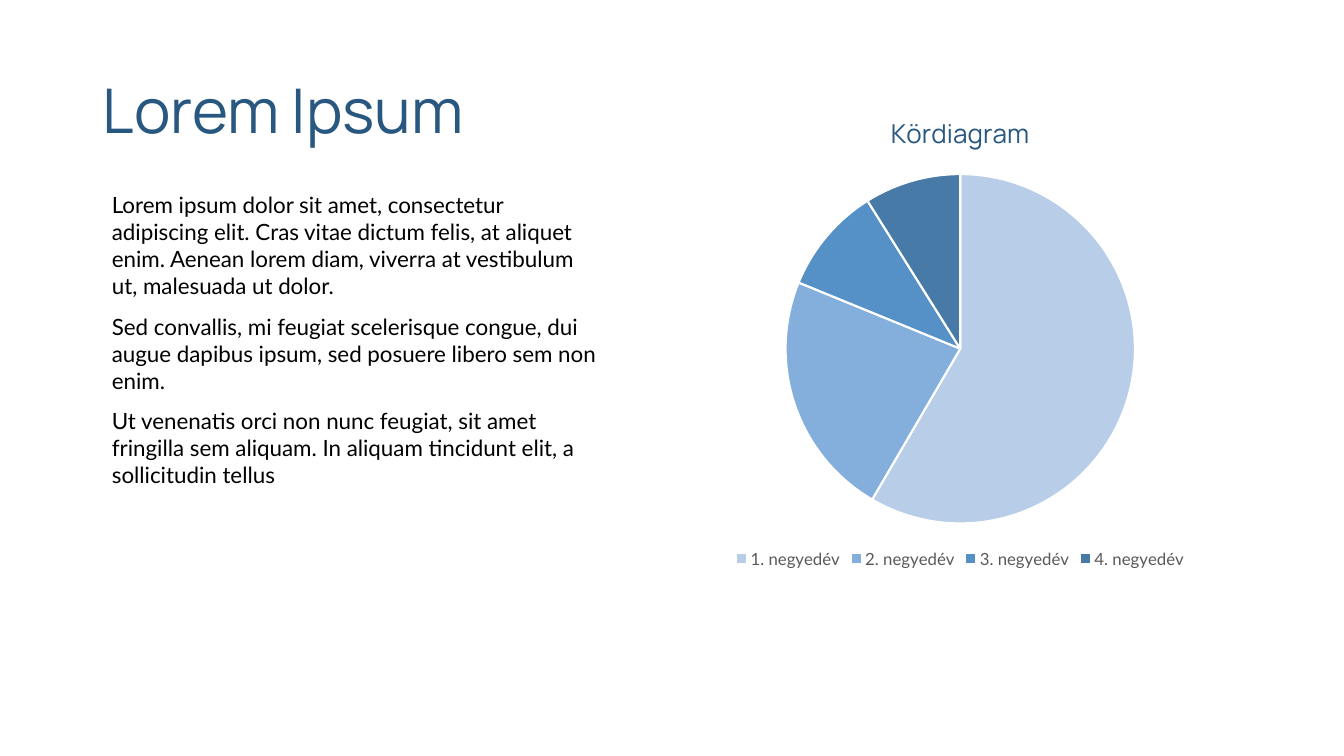
from dataclasses import dataclass

from pptx import Presentation
from pptx.chart.data import CategoryChartData
from pptx.dml.color import RGBColor
from pptx.enum.chart import XL_CHART_TYPE, XL_LEGEND_POSITION
from pptx.enum.text import MSO_ANCHOR
from pptx.util import Cm, Pt

PIE = XL_CHART_TYPE.PIE
BOTTOM = XL_LEGEND_POSITION.BOTTOM
TOP_ANCHOR = MSO_ANCHOR.TOP
MIDDLE_ANCHOR = MSO_ANCHOR.MIDDLE

HEADING_FONT, BODY_FONT = "Manrope", "Lato"
NAVY, BLACK, GRAY, WHITE = "285780", "000000", "595959", "FFFFFF"

PARAGRAPHS = [
    "Lorem ipsum dolor sit amet, consectetur adipiscing elit. Cras vitae dictum felis, "
    "at aliquet enim. Aenean lorem diam, viverra at vestibulum ut, malesuada ut dolor.",
    "Sed convallis, mi feugiat scelerisque congue, dui augue dapibus ipsum, "
    "sed posuere libero sem non enim.",
    "Ut venenatis orci non nunc feugiat, sit amet fringilla sem aliquam. "
    "In aliquam tincidunt elit, a sollicitudin tellus",
]


@dataclass(frozen=True)
class Box:
    left: float
    top: float
    width: float
    height: float

    def lengths(self):
        return Cm(self.left), Cm(self.top), Cm(self.width), Cm(self.height)


@dataclass(frozen=True)
class Quarter:
    name: str
    value: int
    color: str


QUARTERS = [
    Quarter("1. negyedév", 59, "B8CDE8"),
    Quarter("2. negyedév", 23, "84AEDC"),
    Quarter("3. negyedév", 10, "5591C7"),
    Quarter("4. negyedév", 9, "487AA8"),
]


def rgb(color: str) -> RGBColor:
    return RGBColor.from_string(color)


def style_font(font, name: str, size: float, color: str) -> None:
    font.name = name
    font.size = Pt(size)
    font.bold = False
    font.color.rgb = rgb(color)


def add_text(slide, box: Box, paragraphs: list[str], *, font: str, size: float, color: str,
             anchor=TOP_ANCHOR, line_spacing: float = 1.0, space_before: float = 0) -> None:
    tf = slide.shapes.add_textbox(*box.lengths()).text_frame
    tf.word_wrap = True
    tf.vertical_anchor = anchor
    for i, text in enumerate(paragraphs):
        p = tf.add_paragraph() if i else tf.paragraphs[0]
        p.line_spacing = line_spacing
        p.space_before = Pt(space_before if i else 0)
        r = p.add_run()
        r.text = text
        style_font(r.font, font, size, color)


def add_pie(slide, box: Box, title: str, quarters: list[Quarter]) -> None:
    data = CategoryChartData()
    data.categories = [q.name for q in quarters]
    data.add_series("Series 1", [q.value for q in quarters])
    chart = slide.shapes.add_chart(PIE, *box.lengths(), data).chart
    style_font(chart.font, BODY_FONT, 12, GRAY)

    chart.has_title = True
    tf = chart.chart_title.text_frame
    tf.text = title
    style_font(tf.paragraphs[0].runs[0].font, HEADING_FONT, 18.6, NAVY)
    chart.chart_title.include_in_layout = False

    chart.has_legend = True
    chart.legend.position = BOTTOM
    chart.legend.include_in_layout = False
    style_font(chart.legend.font, BODY_FONT, 12, GRAY)

    plot = chart.plots[0]
    plot.vary_by_categories = True
    for i, quarter in enumerate(quarters):
        fmt = plot.series[0].points[i].format
        fmt.fill.solid()
        fmt.fill.fore_color.rgb = rgb(quarter.color)
        fmt.line.color.rgb = rgb(WHITE)
        fmt.line.width = Pt(1.5)


def main() -> None:
    prs = Presentation()
    prs.slide_width, prs.slide_height = Cm(33.87), Cm(19.05)
    s = prs.slides.add_slide(prs.slide_layouts[6])
    add_text(s, Box(2.34, 1.02, 29.21, 3.68), ["Lorem Ipsum"], font=HEADING_FONT, size=44,
             color=NAVY, anchor=MIDDLE_ANCHOR, line_spacing=0.9)
    add_pie(s, Box(13, 2.34, 22.4, 12.09), "Kördiagram", QUARTERS)
    add_text(s, Box(2.57, 4.7, 12.83, 10.59), PARAGRAPHS, font=BODY_FONT, size=16,
             color=BLACK, space_before=10)
    prs.save("out.pptx")


if __name__ == "__main__":
    main()
